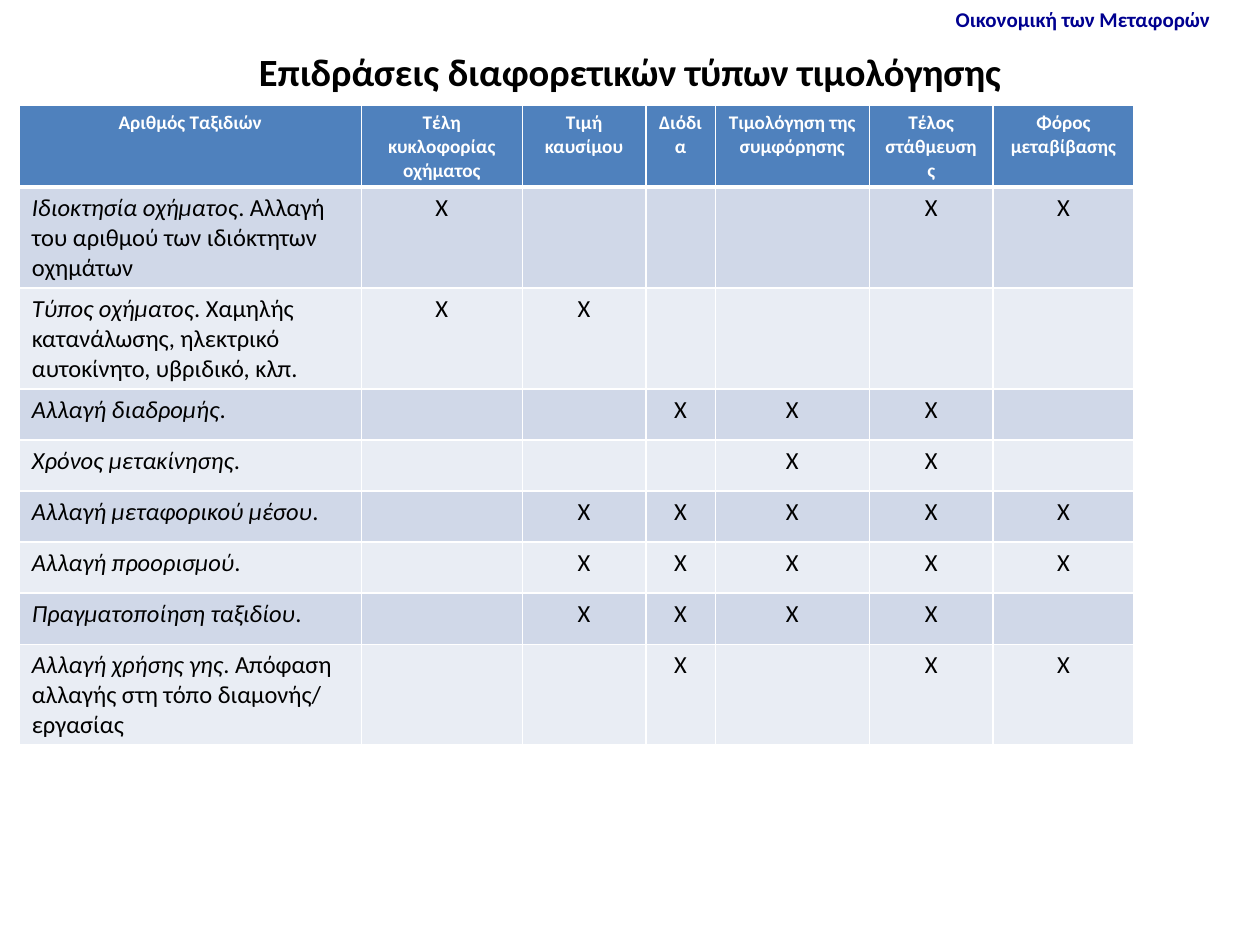
from dataclasses import dataclass

from lxml import etree
from pptx import Presentation
from pptx.dml.color import RGBColor
from pptx.enum import text
from pptx.oxml import ns
from pptx.util import Pt

WHITE = RGBColor(0xFF, 0xFF, 0xFF)
BLACK = RGBColor(0, 0, 0)
NAVY = RGBColor(0, 0, 0x90)
HEADER_BLUE = RGBColor(0x4F, 0x81, 0xBD)
BANDS = (RGBColor(0xD0, 0xD8, 0xE8), RGBColor(0xE9, 0xED, 0xF4))
FONT = "Calibri"
COLUMN_WIDTHS = (195.5, 92, 70.6, 39.7, 88, 70.8, 80.4)
ROW_HEIGHT = 29.2
THIN, THICK = 1, 3


@dataclass(frozen=True)
class Effect:
    """A travel effect; marks has one character for each pricing type."""
    name: str
    detail: str
    marks: str


HEADERS = (
    "Αριθμός Ταξιδιών", "Τέλη κυκλοφορίας οχήματος", "Τιμή καυσίμου", "Διόδια",
    "Τιμολόγηση της συμφόρησης", "Τέλος στάθμευσης", "Φόρος μεταβίβασης",
)
EFFECTS = (
    Effect("Ιδιοκτησία οχήματος", ". Αλλαγή του αριθμού των ιδιόκτητων οχημάτων", "X---XX"),
    Effect("Τύπος οχήματος",
           ". Χαμηλής κατανάλωσης, ηλεκτρικό αυτοκίνητο, υβριδικό, κλπ.", "XX----"),
    Effect("Αλλαγή διαδρομής", ".", "--XXX-"),
    Effect("Χρόνος μετακίνησης", ".", "---XX-"),
    Effect("Αλλαγή μεταφορικού μέσου", ".", "-XXXXX"),
    Effect("Αλλαγή προορισμού", ".", "-XXXXX"),
    Effect("Πραγματοποίηση ταξιδίου", ".", "-XXXX-"),
    Effect("Αλλαγή χρήσης γης", ". Απόφαση αλλαγής στη τόπο διαμονής/ εργασίας", "--X-XX"),
)


def style_paragraph(paragraph, size: float, color: RGBColor, bold: bool = False,
                    centered: bool = False) -> None:
    paragraph.alignment = text.PP_ALIGN.CENTER if centered else text.PP_ALIGN.LEFT
    font = paragraph.font
    font.name, font.size, font.bold = FONT, Pt(size), bold
    font.color.rgb = color


def add_heading(slide, words: str, box: tuple, size: float, color: RGBColor,
                centered: bool = False):
    frame = slide.shapes.add_textbox(*map(Pt, box)).text_frame
    frame.word_wrap = centered
    frame.text = words
    style_paragraph(frame.paragraphs[0], size, color, True, centered)
    return frame


def set_cell_look(cell, fill: RGBColor, top: float, bottom: float) -> None:
    """Draw white borders and the fill; borders must precede the fill."""
    properties = cell._tc.get_or_add_tcPr()
    for side, width in (("L", THIN), ("R", THIN), ("T", top), ("B", bottom)):
        line = etree.SubElement(properties, ns.qn(f"a:ln{side}"), w=str(Pt(width)))
        solid = etree.SubElement(line, ns.qn("a:solidFill"))
        etree.SubElement(solid, ns.qn("a:srgbClr"), val=str(WHITE))
    cell.fill.solid()
    cell.fill.fore_color.rgb = fill


def fill_header(table) -> None:
    for cell, words in zip(table.rows[0].cells, HEADERS):
        cell.text = words
        style_paragraph(cell.text_frame.paragraphs[0], 11, WHITE, True, True)
        set_cell_look(cell, HEADER_BLUE, THIN, THICK)


def fill_effect(table, row: int, effect: Effect) -> None:
    top = THICK if row == 1 else THIN
    for column, cell in enumerate(table.rows[row].cells):
        paragraph = cell.text_frame.paragraphs[0]
        if column == 0:
            for words, italic in ((effect.name, True), (effect.detail, False)):
                run = paragraph.add_run()
                run.text, run.font.italic = words, italic
        elif effect.marks[column - 1] == "X":
            paragraph.text = "X"
        style_paragraph(paragraph, 14, BLACK, centered=column > 0)
        set_cell_look(cell, BANDS[(row - 1) % 2], top, THIN)


def add_effects_table(slide) -> None:
    rows = len(EFFECTS) + 1
    table = slide.shapes.add_table(
        rows, len(HEADERS), Pt(11), Pt(60), Pt(sum(COLUMN_WIDTHS)), Pt(rows * ROW_HEIGHT)
    ).table
    table.horz_banding = False
    for column, width in zip(table.columns, COLUMN_WIDTHS):
        column.width = Pt(width)
    for row in table.rows:
        row.height = Pt(ROW_HEIGHT)
    fill_header(table)
    for row, effect in enumerate(EFFECTS, start=1):
        fill_effect(table, row, effect)


def main() -> None:
    presentation = Presentation()
    presentation.slide_width, presentation.slide_height = Pt(720), Pt(540)
    slide = presentation.slides.add_slide(presentation.slide_layouts[6])
    course = add_heading(slide, "Οικονομική των Μεταφορών", (539, 0, 162, 21.8), 12, NAVY)
    course.auto_size = text.MSO_AUTO_SIZE.SHAPE_TO_FIT_TEXT
    title = add_heading(slide, "Επιδράσεις διαφορετικών τύπων τιμολόγησης",
                        (36, 21.6, 648, 38), 22, BLACK, centered=True)
    title.vertical_anchor = text.MSO_ANCHOR.MIDDLE
    add_effects_table(slide)
    presentation.save("out.pptx")


if __name__ == "__main__":
    main()
